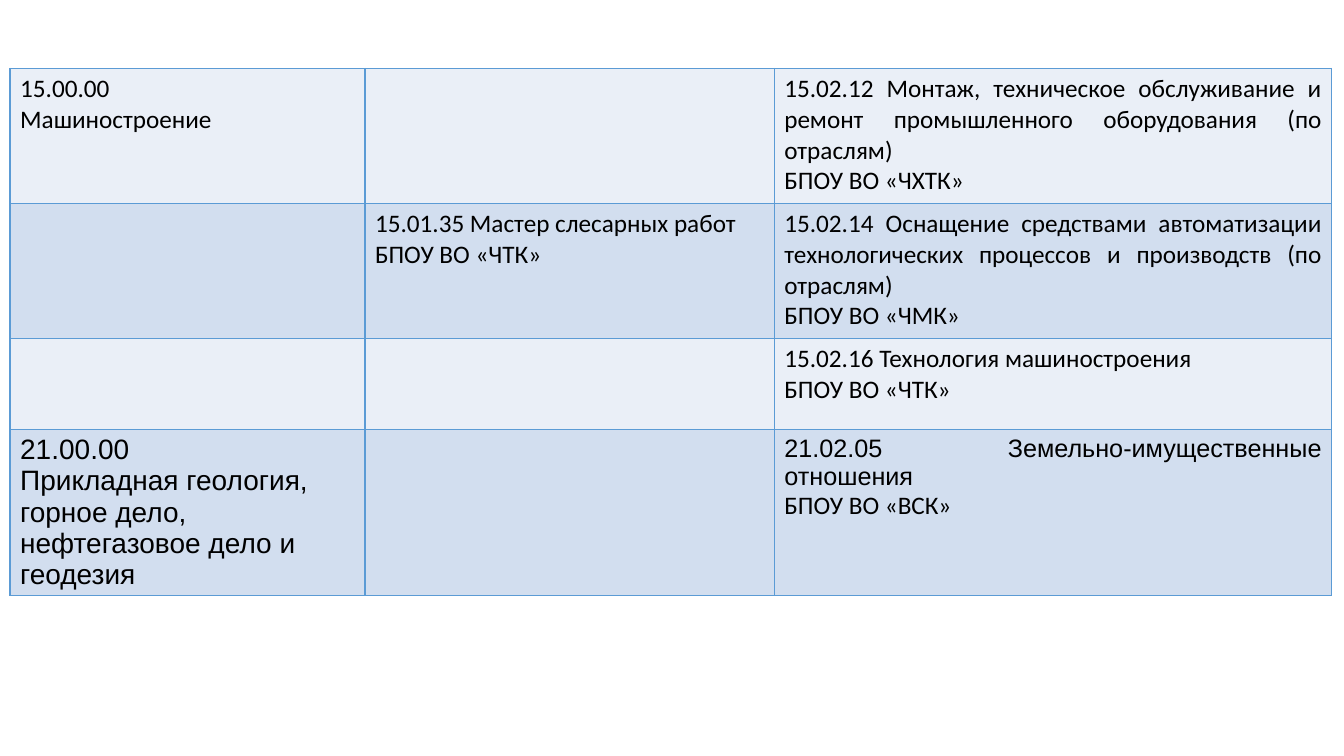
from lxml import etree
from pptx import Presentation
from pptx.dml.color import RGBColor
from pptx.enum.text import PP_ALIGN
from pptx.oxml.ns import qn
from pptx.util import Inches, Pt

LEFT, JUSTIFY = PP_ALIGN.LEFT, PP_ALIGN.JUSTIFY
COLORS = {"text": "000000", "border": "5B9BD5", "light": "EAEFF7", "dark": "D2DEEF"}

SLIDE_WIDTH, SLIDE_HEIGHT = 13.33, 7.5
TABLE_LEFT, TABLE_TOP = 0.1, 0.68
COLUMN_WIDTHS = [3.52, 4.06, 5.53]
ROW_HEIGHTS = [1.34, 1.34, 0.9, 1.34]

BODY = ("Calibri", 18)
ARIAL_BODY = ("Arial", 18)
ARIAL_LARGE = ("Arial", 20)

# Each cell is a list of (text, style) lines
GROUP, TRADE, SPECIALTY = range(3)
ROWS = [
    {
        GROUP: [("15.00.00", BODY), ("Машиностроение", BODY)],
        SPECIALTY: [
            ("15.02.12 Монтаж, техническое обслуживание и ремонт "
             "промышленного оборудования (по отраслям)", BODY),
            ("БПОУ ВО «ЧХТК»", BODY),
        ],
    },
    {
        TRADE: [("15.01.35 Мастер слесарных работ", BODY), ("БПОУ ВО «ЧТК»", BODY)],
        SPECIALTY: [
            ("15.02.14 Оснащение средствами автоматизации технологических "
             "процессов и производств (по отраслям)", BODY),
            ("БПОУ ВО «ЧМК»", BODY),
        ],
    },
    {
        SPECIALTY: [("15.02.16 Технология машиностроения", BODY), ("БПОУ ВО «ЧТК»", BODY)],
    },
    {
        GROUP: [
            ("21.00.00", ARIAL_LARGE),
            ("Прикладная геология, горное дело, нефтегазовое дело и геодезия", ARIAL_LARGE),
        ],
        SPECIALTY: [
            ("21.02.05 Земельно-имущественные отношения", ARIAL_BODY),
            ("БПОУ ВО «ВСК»", BODY),
        ],
    },
]


def set_borders(cell, color, width):
    properties = cell._tc.get_or_add_tcPr()
    for side in ("a:lnL", "a:lnR", "a:lnT", "a:lnB"):
        line = etree.SubElement(properties, qn(side), w=str(Pt(width)))
        fill = etree.SubElement(line, qn("a:solidFill"))
        etree.SubElement(fill, qn("a:srgbClr"), val=color)


def set_fill(cell, color):
    cell.fill.solid()
    cell.fill.fore_color.rgb = RGBColor.from_string(color)


def write_lines(cell, lines, alignment):
    frame = cell.text_frame
    frame.text = "\n".join(text for text, _ in lines)
    for paragraph, (_, (font_name, size)) in zip(frame.paragraphs, lines):
        paragraph.alignment = alignment
        paragraph.font.name = font_name
        paragraph.font.size = Pt(size)
        paragraph.font.color.rgb = RGBColor.from_string(COLORS["text"])


def add_programme_table(page):
    table = page.shapes.add_table(
        len(ROWS), len(COLUMN_WIDTHS), Inches(TABLE_LEFT), Inches(TABLE_TOP),
        Inches(sum(COLUMN_WIDTHS)), Inches(sum(ROW_HEIGHTS))).table
    table.first_row = False
    for column, width in zip(table.columns, COLUMN_WIDTHS):
        column.width = Inches(width)

    for index, (row, height) in enumerate(zip(table.rows, ROW_HEIGHTS)):
        row.height = Inches(height)
        band = COLORS["dark" if index % 2 else "light"]
        for position, cell in enumerate(row.cells):
            # Borders come before the fill in the cell properties
            set_borders(cell, COLORS["border"], 1)
            set_fill(cell, band)
            if position in ROWS[index]:
                alignment = LEFT if position == GROUP else JUSTIFY
                write_lines(cell, ROWS[index][position], alignment)


def main():
    deck = Presentation()
    deck.slide_width = Inches(SLIDE_WIDTH)
    deck.slide_height = Inches(SLIDE_HEIGHT)
    page = deck.slides.add_slide(deck.slide_layouts[6])
    add_programme_table(page)
    deck.save("out.pptx")


if __name__ == "__main__":
    main()
